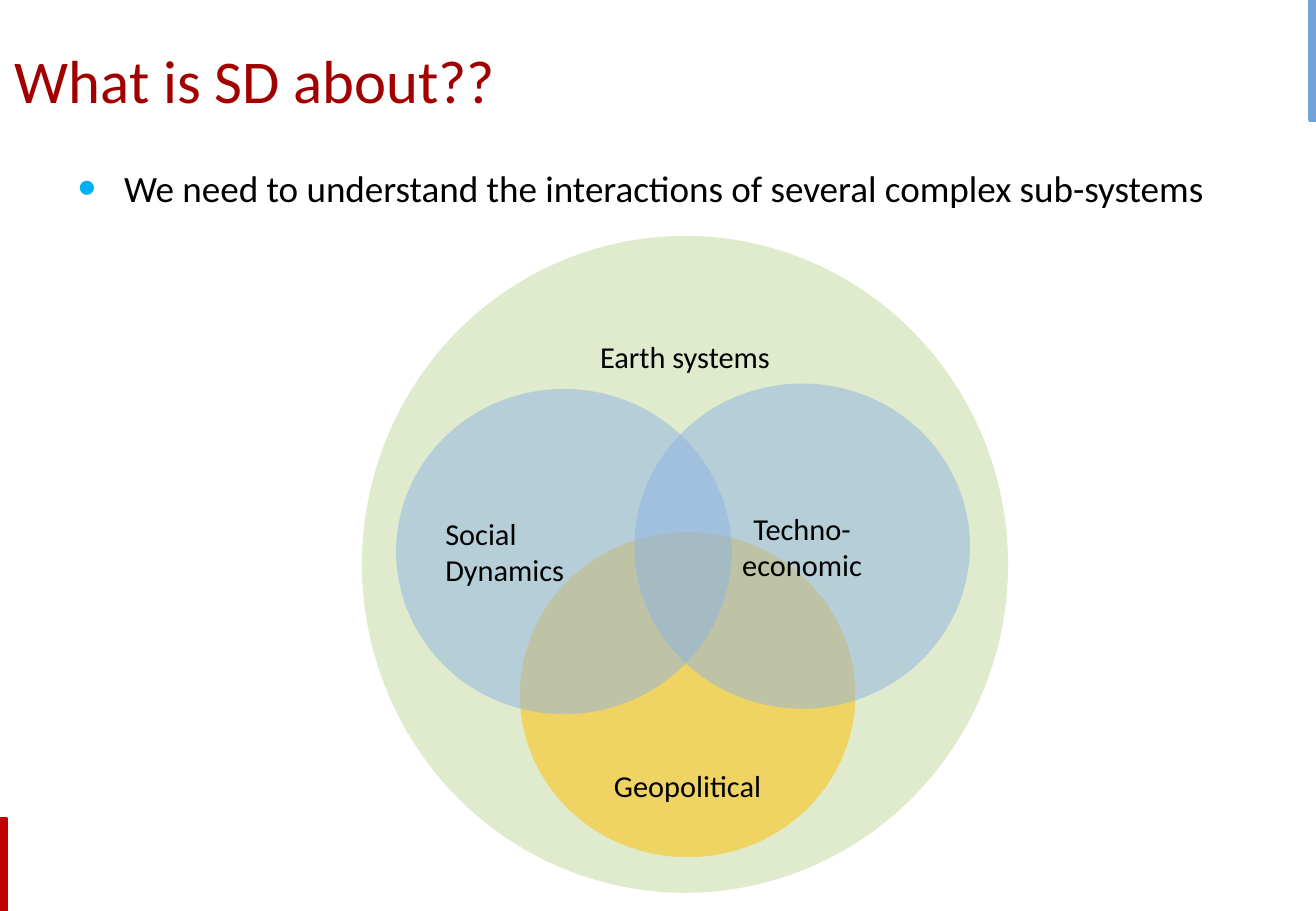
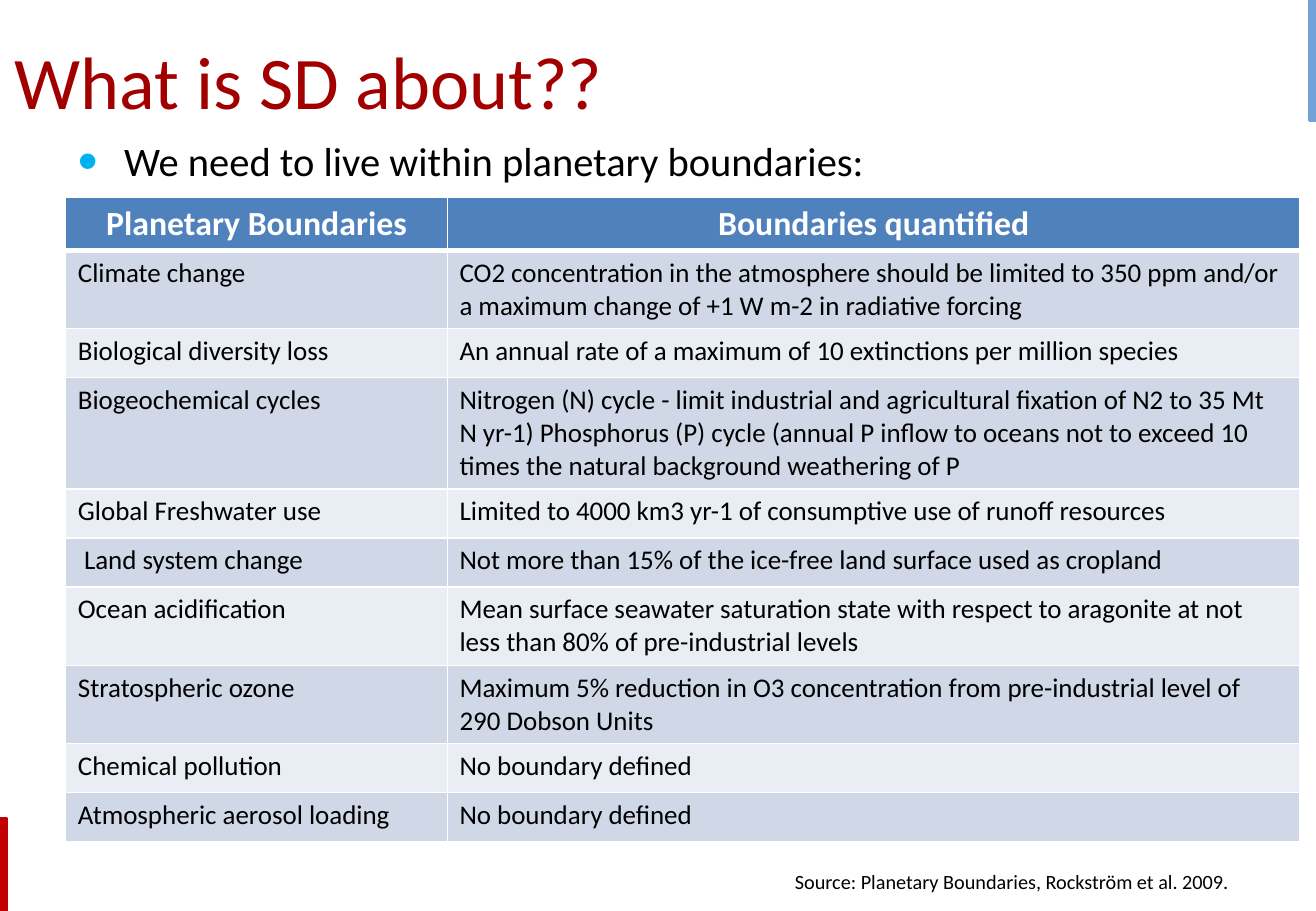
from lxml.etree import SubElement
from pptx import Presentation
from pptx.dml.color import RGBColor
from pptx.enum.shapes import MSO_SHAPE as SHAPE
from pptx.enum.text import MSO_ANCHOR as ANCHOR, MSO_AUTO_SIZE as AUTOSIZE, PP_ALIGN as ALIGN
from pptx.oxml import parse_xml
from pptx.oxml.ns import nsdecls, qn
from pptx.util import Inches, Pt

C = {
    "title": "A20000", "text": "000000", "white": "FFFFFF", "bullet": "00B0F0",
    "blue_band": "72A3D8", "red_band": "C00000",
    "earth": "C3D69B", "geo": "FFC000", "sub": "8EB4E3",
    "head": "4F81BD", "odd": "D0D8E8", "even": "E9EDF4",
}
FONT = "Calibri"

prs = Presentation()
prs.slide_width, prs.slide_height = Inches(10.83), Inches(7.5)
COL, ROW = prs.slide_width / 100, prs.slide_height / 100


def grid(x, y, w, h):
    """Turn columns and rows of a 100 by 100 grid into lengths."""
    return int(x * COL), int(y * ROW), int(w * COL), int(h * ROW)


def write(tf, text, size, color="text", align=ALIGN.LEFT, bold=False, bullet=False):
    for i, line in enumerate(text.split("\n")):
        p = tf.paragraphs[0] if i == 0 else tf.add_paragraph()
        p.alignment = align
        p.space_before = Pt(0)
        if bullet:
            pPr = p._p.get_or_add_pPr()
            pPr.set("marL", str(Inches(0.38)))
            pPr.set("indent", str(-Inches(0.38)))
            SubElement(SubElement(pPr, qn("a:buClr")), qn("a:srgbClr"), val=C["bullet"])
            SubElement(pPr, qn("a:buSzPct"), val="140000")
            SubElement(pPr, qn("a:buFont"), typeface="Arial")
            SubElement(pPr, qn("a:buChar"), char="•")
        r = p.add_run()
        r.text = line
        r.font.name, r.font.size, r.font.bold = FONT, Pt(size), bold
        r.font.color.rgb = RGBColor.from_string(C[color])


# Slides with their title and bullet
layout = prs.slide_layouts[1]
title = layout.placeholders[0]
title.left, title.top, title.width, title.height = grid(0.2, 0.4, 80.7, 16.7)

slides = []
for title_size, bullet, size, body_box in [
    (36, "We need to understand the interactions of several complex sub-systems", 22,
     (5, 17.5, 90, 77.7)),
    (44, "We need to live within planetary boundaries:", 24, (5, 14.3, 90, 75)),
]:
    s = prs.slides.add_slide(layout)
    slides.append(s)
    write(s.shapes.title.text_frame, "What is SD about??", title_size, "title")
    s.shapes.title.text_frame.vertical_anchor = ANCHOR.MIDDLE
    body = s.placeholders[1]
    body.left, body.top, body.width, body.height = grid(*body_box)
    body.text_frame.auto_size = AUTOSIZE.NONE
    write(body.text_frame, bullet, size, bullet=True)

venn, limits = slides

# Edge bands, drawn once and moved to the shared layout
for shape_id, (color, box) in enumerate([
    ("blue_band", (99.5, 0, 0.5, 13.2)),
    ("red_band", (0, 89.9, 0.5, 10.1)),
], start=20):
    band = venn.shapes.add_shape(SHAPE.FLOWCHART_PROCESS, *grid(*box))
    band.shadow.inherit = False
    band.fill.solid()
    band.fill.fore_color.rgb = band.line.color.rgb = RGBColor.from_string(C[color])
    band.line.width = Pt(2)
    band.element.nvSpPr.cNvPr.id = shape_id
    layout.shapes.element.append(band.element)

# Overlapping systems
SUB = (25.5, 35.7)
for text, color, box, anchor, align in [
    ("Earth systems", "earth", (27.5, 25.9, 49.1, 72.1), ANCHOR.TOP, ALIGN.CENTER),
    ("Geopolitical", "geo", (39.5, 58.4, *SUB), ANCHOR.BOTTOM, ALIGN.CENTER),
    ("Techno-economic", "sub", (48.2, 42.1, *SUB), ANCHOR.MIDDLE, ALIGN.CENTER),
    ("Social\nDynamics", "sub", (30.1, 42.7, *SUB), ANCHOR.MIDDLE, ALIGN.LEFT),
]:
    circle = venn.shapes.add_shape(SHAPE.OVAL, *grid(*box))
    circle.shadow.inherit = False
    circle.line.fill.background()
    circle.fill.solid()
    circle.fill.fore_color.rgb = RGBColor.from_string(C[color])
    rgb = circle.element.spPr.find(qn("a:solidFill")).find(qn("a:srgbClr"))
    SubElement(rgb, qn("a:alpha"), val="51000")
    tf = circle.text_frame
    tf.vertical_anchor = anchor
    tf.word_wrap = align == ALIGN.CENTER
    if align == ALIGN.LEFT:
        tf.margin_left = tf.margin_right = 0
    write(tf, text, 18, align=align)

# Table of boundaries
ROWS = [
    ("Planetary Boundaries", "Boundaries quantified"),
    ("Climate change",
     "CO2 concentration in the atmosphere should be limited to 350 ppm and/or "
     "a maximum change of +1 W m-2 in radiative forcing"),
    ("Biological diversity loss",
     "An annual rate of a maximum of 10 extinctions per million species"),
    ("Biogeochemical cycles",
     "Nitrogen (N) cycle - limit industrial and agricultural fixation of N2 to 35 Mt "
     "N yr-1) Phosphorus (P) cycle (annual P inflow to oceans not to exceed 10 "
     "times the natural background weathering of P"),
    ("Global Freshwater use",
     "Limited to 4000 km3 yr-1 of consumptive use of runoff resources"),
    (" Land system change",
     "Not more than 15% of the ice-free land surface used as cropland"),
    ("Ocean acidification",
     "Mean surface seawater saturation state with respect to aragonite at not "
     "less than 80% of pre-industrial levels"),
    ("Stratospheric ozone",
     "Maximum 5% reduction in O3 concentration from pre-industrial level of "
     "290 Dobson Units"),
    ("Chemical pollution", "No boundary defined"),
    ("Atmospheric aerosol loading", "No boundary defined"),
]
WIDTHS = (29, 64.8)
ROW_HEIGHT = 5.4

table = limits.shapes.add_table(
    len(ROWS), len(WIDTHS), *grid(5, 21.6, sum(WIDTHS), ROW_HEIGHT * len(ROWS))).table
for column, width in zip(table.columns, WIDTHS):
    column.width = int(width * COL)
for i, row in enumerate(ROWS):
    table.rows[i].height = int(ROW_HEIGHT * ROW)
    for j, text in enumerate(row):
        cell = table.cell(i, j)
        if i == 0:
            fill = "head"
            write(cell.text_frame, text, 20, "white", ALIGN.CENTER, bold=True)
        else:
            fill = "odd" if i % 2 else "even"
            write(cell.text_frame, text, 16)
        cell.fill.solid()
        cell.fill.fore_color.rgb = RGBColor.from_string(C[fill])
        for k, side in enumerate(("lnL", "lnR", "lnT", "lnB")):
            under_head = (i, side) in ((0, "lnB"), (1, "lnT"))
            cell._tc.get_or_add_tcPr().insert(k, parse_xml(
                f'<a:{side} {nsdecls("a")} w="{Pt(3 if under_head else 1)}"><a:solidFill>'
                f'<a:srgbClr val="{C["white"]}"/></a:solidFill></a:{side}>'))

source = limits.shapes.add_textbox(*grid(59.5, 94.8, 39.1, 4)).text_frame
source.word_wrap = True
write(source, "Source: Planetary Boundaries, Rockström et al. 2009.", 12)

prs.save("out.pptx")
